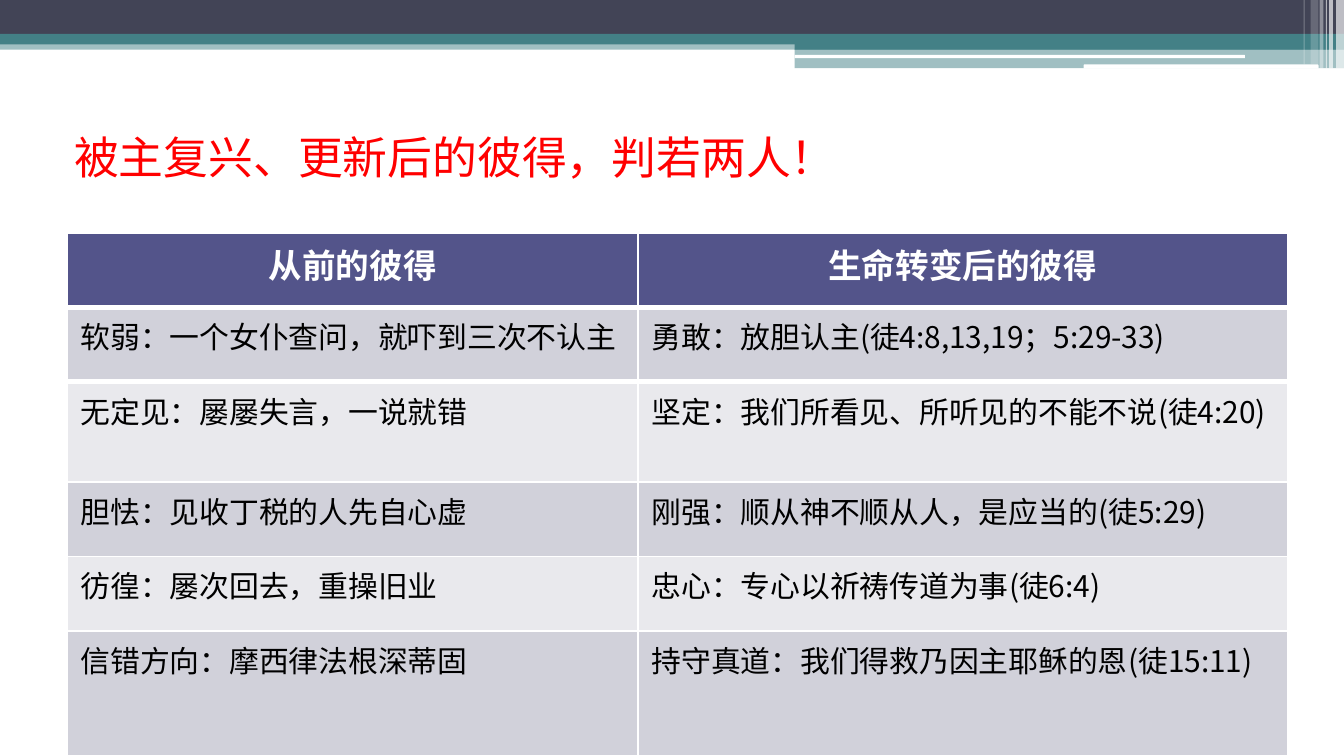
from dataclasses import dataclass

import pptx
import pptx.dml.color
import pptx.enum.shapes
import pptx.enum.text
import pptx.oxml
import pptx.oxml.ns
import pptx.util

Cm = pptx.util.Cm
Pt = pptx.util.Pt
SHAPE = pptx.enum.shapes.MSO_SHAPE
ALIGN = pptx.enum.text.PP_ALIGN
NS = pptx.oxml.ns.nsdecls("a")


@dataclass(frozen=True)
class Theme:
    """Colours, font and type sizes of the deck."""
    font: str = "Noto Sans CJK SC"
    white: str = "FFFFFF"
    black: str = "000000"
    red: str = "FF0000"
    navy: str = "424456"
    teal: str = "438086"
    header: str = "53548A"
    bands: tuple = ("D1D1DA", "E9E9ED")
    title_size: int = 24
    header_size: int = 18
    body_size: int = 16


THEME = Theme()

ROWS = [
    ("从前的彼得", "生命转变后的彼得"),
    ("软弱：一个女仆查问，就吓到三次不认主", "勇敢：放胆认主(徒4:8,13,19；5:29-33)"),
    ("无定见：屡屡失言，一说就错", "坚定：我们所看见、所听见的不能不说(徒4:20)"),
    ("胆怯：见收丁税的人先自心虚", "刚强：顺从神不顺从人，是应当的(徒5:29)"),
    ("彷徨：屡次回去，重操旧业", "忠心：专心以祈祷传道为事(徒6:4)"),
    ("信错方向：摩西律法根深蒂固", "持守真道：我们得救乃因主耶稣的恩(徒15:11)"),
]


def rgb(colour):
    """Return a hex string as a colour."""
    return pptx.dml.color.RGBColor.from_string(colour)


def write(tf, text, size, colour, bold=False, align=ALIGN.LEFT):
    """Fill a text frame with one styled paragraph."""
    p = tf.paragraphs[0]
    p.text = text
    p.alignment = align
    p.font.name = THEME.font
    p.font.size = Pt(size)
    p.font.bold = bold
    p.font.color.rgb = rgb(colour)
    props = p._p.get_or_add_pPr().get_or_add_defRPr()
    props.append(pptx.oxml.parse_xml(f'<a:ea {NS} typeface="{THEME.font}"/>'))


def add_bar(s, left, top, width, height, colour, opacity=100, kind=SHAPE.RECTANGLE):
    """Add a plain bar, see-through when opacity is below 100."""
    sp = s.shapes.add_shape(kind, Cm(left), Cm(top), Cm(width), Cm(height))
    sp.shadow.inherit = False
    sp.fill.solid()
    sp.fill.fore_color.rgb = rgb(colour)
    sp.line.fill.background()
    if opacity < 100:
        clr = sp._element.spPr.find(".//" + pptx.oxml.ns.qn("a:srgbClr"))
        clr.append(pptx.oxml.parse_xml(f'<a:alpha {NS} val="{opacity * 1000}"/>'))


def add_banner(s, left, top, width, height):
    """Draw the layered bars and light stripes across the top."""
    right = left + width
    step = left + 15.02
    add_bar(s, left, top + 0.76, width, 0.18, THEME.teal, 50)
    add_bar(s, left, top, width, 0.64, THEME.navy)
    add_bar(s, left, top + 0.64, width, 0.2, THEME.teal)
    add_bar(s, step, top + 0.76, right - step, 0.18, THEME.teal)
    add_bar(s, step, top + 0.92, right - step, 0.37, THEME.teal, 50)
    for x, y, w, h in [(15.02, 1.04, 8.51, 0.06), (20.48, 1.22, 4.44, 0.08)]:
        add_bar(s, left + x, top + y, w, h, THEME.white, kind=SHAPE.ROUNDED_RECTANGLE)
    stripes = [(0.15, 0.15, 0, 65), (0.28, 0.07, 0, 65), (0.34, 0.02, 0, 60),
               (0.46, 0.07, 0, 40), (0.63, 0.15, 0.08, 20), (0.76, 0.02, 0.08, 30)]
    for offset, w, trim, opacity in stripes:
        add_bar(s, right - offset, top, w, height - trim, THEME.white, opacity)


def add_title(s, left, top, width, height):
    """Place the red statement at the top of its box."""
    sp = s.shapes.add_textbox(Cm(left), Cm(top), Cm(width), Cm(height))
    tf = sp.text_frame
    tf.word_wrap = True
    tf.margin_left = Cm(0.56)
    tf.margin_top = Cm(0.61)
    write(tf, "被主复兴、更新后的彼得，判若两人！", THEME.title_size, THEME.red)


def add_rule(cell, side, points):
    """Give one side of a cell a white border."""
    cell._tc.get_or_add_tcPr().insert(0, pptx.oxml.parse_xml(
        f'<a:{side} {NS} w="{Pt(points)}"><a:solidFill>'
        f'<a:srgbClr val="{THEME.white}"/></a:solidFill></a:{side}>'))


def add_comparison(s, left, top, width, height):
    """Build the before and after table with banded rows."""
    single, double = 1.41, 1.89
    heights = [single, single, double, single, single]
    heights.append(height - sum(heights))
    first_column = 10.79
    frame = s.shapes.add_table(len(ROWS), 2, Cm(left), Cm(top), Cm(width), Cm(height))
    table = frame.table
    table.columns[0].width = Cm(first_column)
    table.columns[1].width = Cm(width - first_column)
    for i, texts in enumerate(ROWS):
        table.rows[i].height = Cm(heights[i])
        for j, text in enumerate(texts):
            cell = table.cell(i, j)
            cell.fill.solid()
            if i == 0:
                cell.fill.fore_color.rgb = rgb(THEME.header)
                write(cell.text_frame, text, THEME.header_size, THEME.white, True, ALIGN.CENTER)
                add_rule(cell, "lnB", 3)
            else:
                cell.fill.fore_color.rgb = rgb(THEME.bands[(i - 1) % 2])
                write(cell.text_frame, text, THEME.body_size, THEME.black)
                add_rule(cell, "lnT", 3 if i == 1 else 1)


def main():
    """Build and save the slide."""
    prs = pptx.Presentation()
    prs.slide_width = Cm(25.4)
    prs.slide_height = Cm(14.29)
    s = prs.slides.add_slide(prs.slide_layouts[6])
    add_banner(s, 0, 0, 25.4, 1.3)
    add_title(s, 0.84, 1.85, 23.29, 11.84)
    add_comparison(s, 1.27, 4.4, 23.06, 9.89)
    prs.save("out.pptx")


if __name__ == "__main__":
    main()
